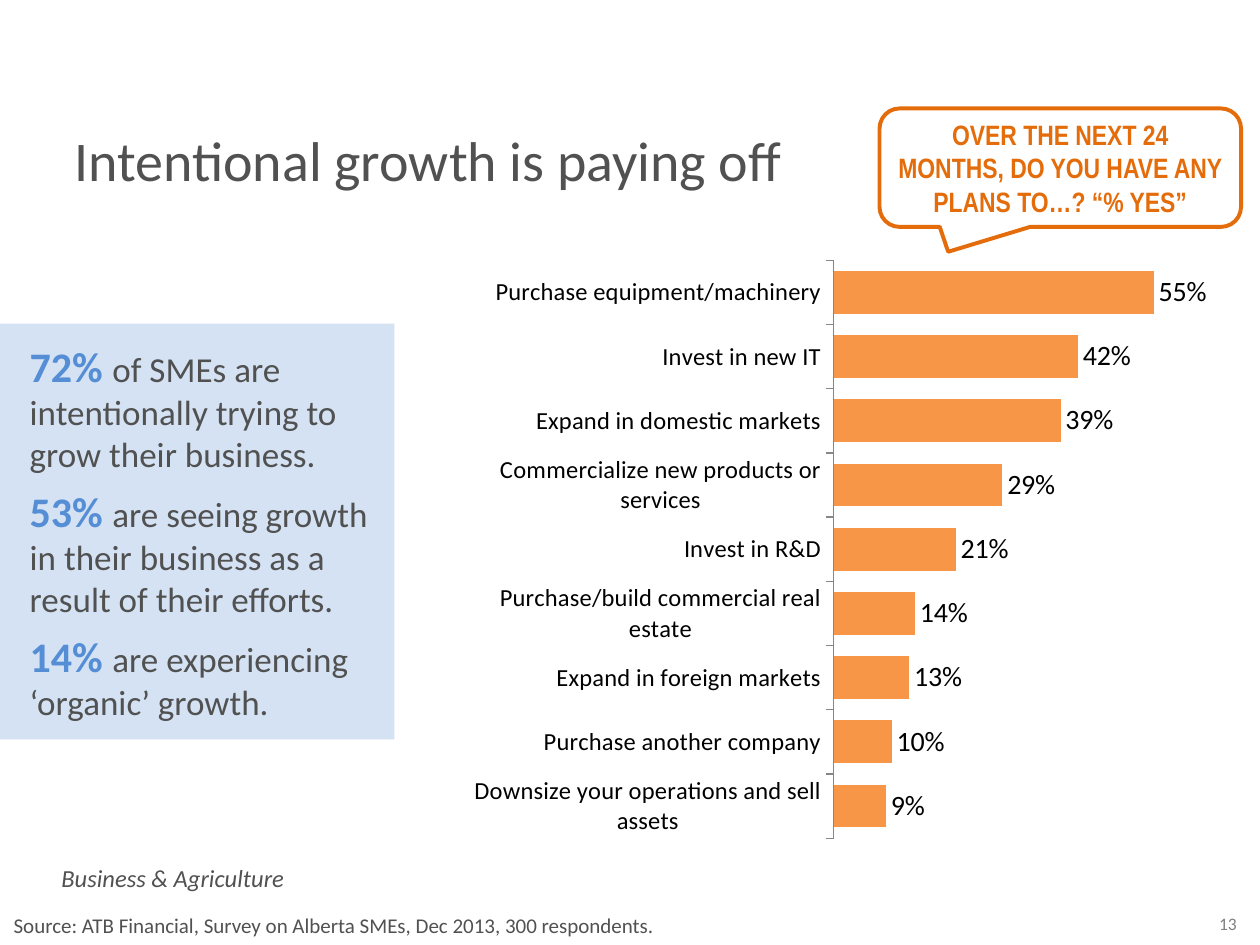
from lxml import etree
from pptx import Presentation
from pptx.chart.data import CategoryChartData
from pptx.dml.color import RGBColor
from pptx.enum.chart import XL_CHART_TYPE, XL_LABEL_POSITION, XL_TICK_MARK
from pptx.enum.shapes import MSO_SHAPE
from pptx.enum.text import MSO_ANCHOR, PP_ALIGN
from pptx.oxml import parse_xml
from pptx.oxml.ns import nsdecls, qn
from pptx.util import Pt

LEFT, CENTER = PP_ALIGN.LEFT, PP_ALIGN.CENTER
TOP, MIDDLE = MSO_ANCHOR.TOP, MSO_ANCHOR.MIDDLE
RECTANGLE = MSO_SHAPE.RECTANGLE
CALLOUT = MSO_SHAPE.ROUNDED_RECTANGULAR_CALLOUT
BAR_CLUSTERED = XL_CHART_TYPE.BAR_CLUSTERED
OUTSIDE_END = XL_LABEL_POSITION.OUTSIDE_END
TICK_OUTSIDE, TICK_NONE = XL_TICK_MARK.OUTSIDE, XL_TICK_MARK.NONE

COLORS = {
    "text": "505150",
    "number": "808080",
    "panel": "C6D9F1",
    "highlight": "558ED5",
    "question": "E46C0A",
    "bar": "F79646",
    "axis": "868686",
    "label": "000000",
}

FINDINGS = [
    ("72% ", "of SMEs are intentionally trying to grow their business."),
    ("53% ", "are seeing growth in their business as a result of their efforts."),
    ("14% ", "are experiencing ‘organic’ growth."),
]

PLANS = {
    "Downsize your operations and sell assets": 0.09,
    "Purchase another company": 0.10,
    "Expand in foreign markets": 0.13,
    "Purchase/build commercial real estate": 0.14,
    "Invest in R&D": 0.21,
    "Commercialize new products or services": 0.29,
    "Expand in domestic markets": 0.39,
    "Invest in new IT": 0.42,
    "Purchase equipment/machinery": 0.55,
}


def color(name):
    return RGBColor.from_string(COLORS[name])


def set_font(font, size, ink="text", face="Calibri", bold=False, italic=False):
    font.name = face
    font.size = Pt(size)
    font.bold = bold
    font.italic = italic
    font.color.rgb = color(ink)


def write(paragraph, text, align=LEFT, **style):
    paragraph.alignment = align
    run = paragraph.add_run()
    run.text = text
    set_font(run.font, **style)


class SlideBuilder:
    def __init__(self, slide):
        self.shapes = slide.shapes

    def text(self, box, text, **style):
        frame = self.shapes.add_textbox(*map(Pt, box)).text_frame
        frame.word_wrap = True
        frame.vertical_anchor = TOP
        write(frame.paragraphs[0], text, **style)

    def shape(self, kind, box):
        shape = self.shapes.add_shape(kind, *map(Pt, box))
        shape.shadow.inherit = False
        shape.text_frame.word_wrap = True
        shape.text_frame.vertical_anchor = MIDDLE
        return shape

    def panel(self, box, findings, opacity):
        panel = self.shape(RECTANGLE, box)
        panel.fill.solid()
        panel.fill.fore_color.rgb = color("panel")
        panel.line.fill.background()
        tint = panel.fill._xPr.find(".//" + qn("a:srgbClr"))
        etree.SubElement(tint, qn("a:alpha")).set("val", str(opacity * 1000))
        frame = panel.text_frame
        frame.margin_left, frame.margin_right = Pt(17), Pt(14.4)
        frame.margin_top = frame.margin_bottom = Pt(8.6)
        for index, (share, finding) in enumerate(findings):
            paragraph = frame.add_paragraph() if index else frame.paragraphs[0]
            paragraph.space_after = Pt(6)
            write(paragraph, share, size=24, ink="highlight", bold=True)
            write(paragraph, finding, size=20)

    def callout(self, box, text, adjustments, **style):
        callout = self.shape(CALLOUT, box)
        for index, value in enumerate(adjustments):
            callout.adjustments[index] = value
        callout.fill.background()
        callout.line.color.rgb = color(style["ink"])
        callout.line.width = Pt(2.25)
        write(callout.text_frame.paragraphs[0], text, align=CENTER, **style)

    def bar_chart(self, box, values, plot_area):
        data = CategoryChartData(number_format="0%")
        data.categories = list(values)
        data.add_series("Series 1", list(values.values()))
        chart = self.shapes.add_chart(BAR_CLUSTERED, *map(Pt, box), data).chart
        chart.has_legend = False
        chart.has_title = False
        set_font(chart.font, 18, ink="label")

        share_axis = chart.value_axis
        share_axis.minimum_scale, share_axis.maximum_scale = 0, 0.7
        share_axis.has_major_gridlines = False
        share_axis.visible = False
        plan_axis = chart.category_axis
        plan_axis.major_tick_mark = TICK_OUTSIDE
        plan_axis.minor_tick_mark = TICK_NONE
        plan_axis.format.line.color.rgb = color("axis")
        set_font(plan_axis.tick_labels.font, 14, ink="label")

        plot = chart.plots[0]
        plot.gap_width = 50
        plot.vary_by_categories = False
        bars = plot.series[0].format.fill
        bars.solid()
        bars.fore_color.rgb = color("bar")
        plot.has_data_labels = True
        labels = plot.data_labels
        labels.show_value = True
        labels.position = OUTSIDE_END
        labels.number_format = "0%"
        labels.number_format_is_linked = False
        set_font(labels.font, 16, ink="label")
        self.place_plot(chart, plot_area)

    def place_plot(self, chart, plot_area):
        sizes = "".join(
            f'<c:{key} val="{value}"/>' for key, value in zip("xywh", plot_area)
        )
        layout = parse_xml(
            f'<c:layout {nsdecls("c")}><c:manualLayout>'
            '<c:layoutTarget val="inner"/><c:xMode val="edge"/><c:yMode val="edge"/>'
            f"{sizes}</c:manualLayout></c:layout>"
        )
        area = chart._chartSpace.find(".//" + qn("c:plotArea"))
        for previous in area.findall(qn("c:layout")):
            area.remove(previous)
        area.insert(0, layout)


def main():
    deck = Presentation()
    deck.slide_width, deck.slide_height = Pt(720), Pt(540)
    builder = SlideBuilder(deck.slides.add_slide(deck.slide_layouts[6]))

    builder.text((684, 518.4, 35.3, 19.4), "13", size=10, ink="number", align=CENTER)
    builder.text((28, 489.6, 202, 24.5), "Business & Agriculture", size=14, italic=True)
    builder.text((35.3, 68.4, 636, 46), "Intentional growth is paying off", size=32)
    builder.panel((0, 185, 225.4, 237.6), FINDINGS, opacity=75)
    builder.bar_chart((261.4, 138.2, 447.8, 351.4), PLANS, (0.48, 0.03, 0.52, 0.94))
    builder.callout(
        (502.6, 62, 206.6, 67.7),
        "OVER THE NEXT 24 MONTHS, DO YOU HAVE ANY PLANS TO…? “% YES”",
        (-0.31, 0.71, 0.17),
        size=16, ink="question", face="Arial Narrow", bold=True,
    )
    builder.text(
        (0.7, 517.7, 509, 21.6),
        "Source: ATB Financial, Survey on Alberta SMEs, Dec 2013, 300 respondents.",
        size=12,
    )
    deck.save("out.pptx")


if __name__ == "__main__":
    main()
